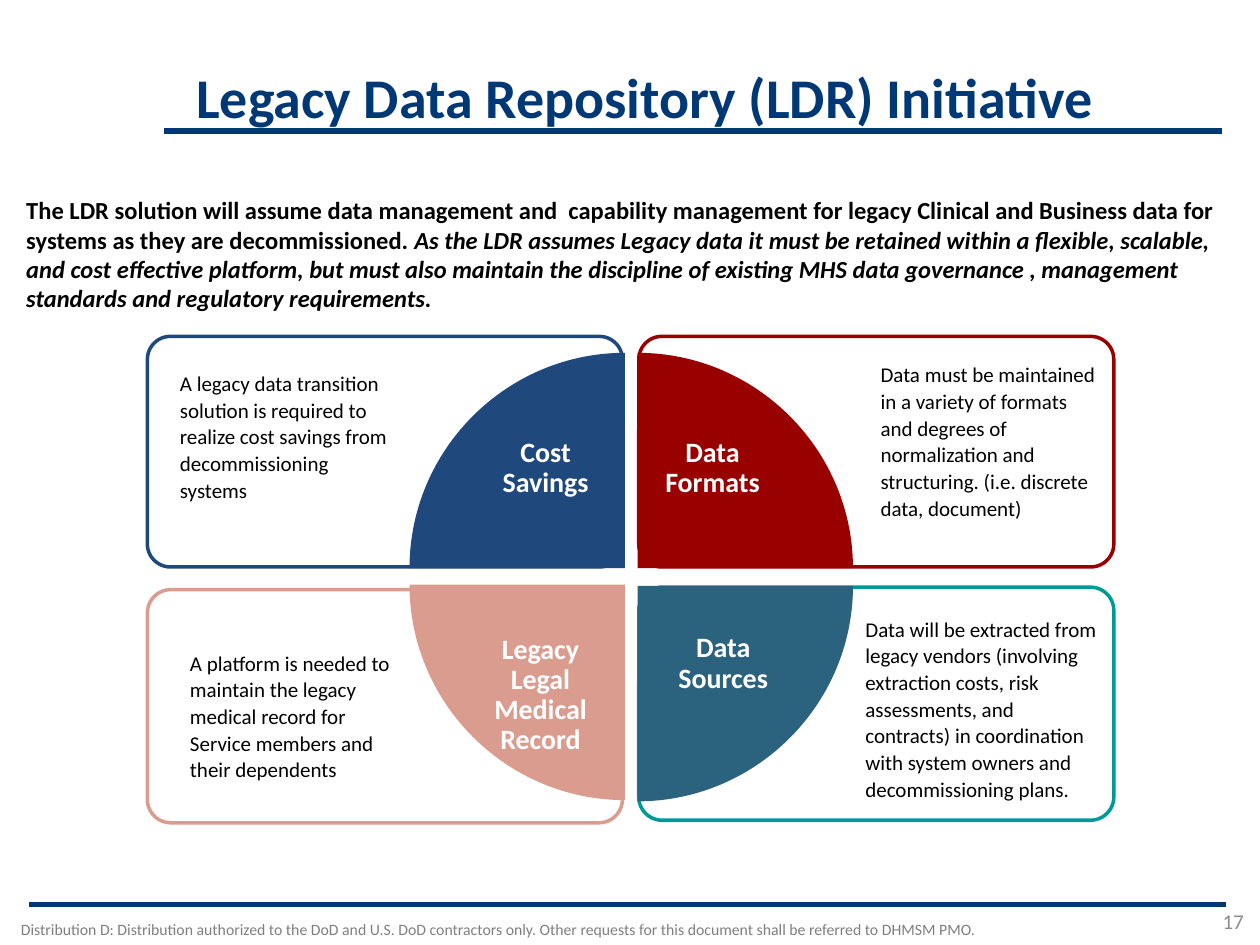
from dataclasses import dataclass

from lxml import etree
from pptx import Presentation
from pptx.dml.color import RGBColor
from pptx.enum.shapes import MSO_CONNECTOR, MSO_SHAPE
from pptx.enum.text import MSO_ANCHOR, PP_ALIGN
from pptx.oxml.ns import qn
from pptx.util import Inches, Pt

STRAIGHT = MSO_CONNECTOR.STRAIGHT
ROUNDED = MSO_SHAPE.ROUNDED_RECTANGLE
TOP, BOTTOM = MSO_ANCHOR.TOP, MSO_ANCHOR.BOTTOM
LEFT, CENTER, RIGHT = PP_ALIGN.LEFT, PP_ALIGN.CENTER, PP_ALIGN.RIGHT


@dataclass(frozen=True)
class Theme:
    """Colours, font and type sizes of the slide."""
    font: str = "Calibri"
    navy: str = "003876"
    white: str = "FFFFFF"
    black: str = "000000"
    page_grey: str = "8C8C8C"
    footer_grey: str = "7F7F7F"
    blue: str = "1F497D"
    red: str = "990000"
    rose: str = "DB9C90"
    teal: str = "009999"
    petrol: str = "2B637F"
    title: int = 32
    label: int = 16
    intro: int = 14
    note: int = 12
    footer: int = 9


THEME = Theme()
RADIUS = 1.71
ARC_PULL = 0.55


@dataclass(frozen=True)
class Quadrant:
    """One card: its box, hub, label and note, the last three relative to the box."""
    box: tuple
    hub: tuple
    side: tuple
    border: str
    fill: str
    label: str
    label_box: tuple
    note: str
    note_box: tuple


QUADRANTS = [
    Quadrant((1.17, 2.67, 3.77, 1.83), (3.79, 1.84), (-1, -1), THEME.blue, THEME.blue,
             "Cost Savings", (2.55, 0.76, 1.22, 0.59),
             "A legacy data transition solution is required to realize cost savings "
             "from decommissioning systems", (0.16, 0.21, 1.87, 1.45)),
    Quadrant((5.07, 2.67, 3.77, 1.83), (-0.01, 1.84), (1, -1), THEME.red, THEME.red,
             "Data Formats", (0, 0.76, 1.17, 0.59),
             "Data must be maintained in a variety of formats and degrees of "
             "normalization and structuring. (i.e. discrete data, document)",
             (1.82, 0.14, 1.94, 1.39)),
    Quadrant((1.17, 4.68, 3.77, 1.85), (3.79, -0.04), (-1, 1), THEME.rose, THEME.rose,
             "Legacy Legal Medical Record", (2.46, 0.31, 1.32, 1.07),
             "A platform is needed to maintain the legacy medical record for "
             "Service members and their dependents", (0.24, 0.42, 1.83, 1.17)),
    Quadrant((5.07, 4.66, 3.77, 1.85), (-0.01, -0.01), (1, 1), THEME.teal, THEME.petrol,
             "Data Sources", (0, 0.32, 1.34, 0.59),
             "Data will be extracted from legacy vendors (involving extraction costs, "
             "risk assessments, and contracts) in coordination with system owners and "
             "decommissioning plans.", (1.7, 0.17, 2.06, 1.59)),
]


def rgb(color):
    """Turn a hex string into a colour."""
    return RGBColor.from_string(color)


def add_text(slide, box, runs, size, color, align=LEFT, anchor=TOP, spacing=1.0):
    """Place one paragraph of (text, bold, italic) runs in a box."""
    frame = slide.shapes.add_textbox(*map(Inches, box)).text_frame
    frame.word_wrap = True
    frame.vertical_anchor = anchor
    paragraph = frame.paragraphs[0]
    paragraph.alignment = align
    paragraph.line_spacing = spacing
    for text, bold, italic in runs:
        run = paragraph.add_run()
        run.text = text
        run.font.name = THEME.font
        run.font.size = Pt(size)
        run.font.bold = bold
        run.font.italic = italic
        run.font.color.rgb = rgb(color)


def add_rule(slide, left, right, y):
    """Draw a horizontal navy rule."""
    rule = slide.shapes.add_connector(
        STRAIGHT, Inches(left), Inches(y), Inches(right), Inches(y))
    rule.line.color.rgb = rgb(THEME.navy)
    rule.line.width = Pt(3)
    etree.SubElement(rule._element.spPr, qn("a:effectLst"))


def add_card(slide, box, border):
    """Draw a rounded, nearly opaque white card."""
    card = slide.shapes.add_shape(ROUNDED, *map(Inches, box))
    card.adjustments[0] = 0.1
    card.shadow.inherit = False
    card.fill.solid()
    card.fill.fore_color.rgb = rgb(THEME.white)
    white = card._element.spPr.find(qn("a:solidFill"))[0]
    etree.SubElement(white, qn("a:alpha"), val="90000")
    card.line.color.rgb = rgb(border)
    card.line.width = Pt(2)


def bend_outer_edge(wedge):
    """Turn the straight edge opposite the hub into a quarter arc."""
    outline = wedge._element.spPr.find(".//" + qn("a:path"))
    hub, start, end = [(int(point.get("x")), int(point.get("y")))
                       for point in outline.iter(qn("a:pt"))]
    first = [s + ARC_PULL * (e - h) for h, s, e in zip(hub, start, end)]
    second = [e + ARC_PULL * (s - h) for h, s, e in zip(hub, start, end)]
    curve = etree.Element(qn("a:cubicBezTo"))
    for x, y in (first, second, end):
        etree.SubElement(curve, qn("a:pt"), x=str(round(x)), y=str(round(y)))
    outline.replace(outline.findall(qn("a:lnTo"))[1], curve)


def add_wedge(slide, hub, side, color):
    """Draw a quarter disc that opens from its hub towards one side."""
    (x, y), (across, down) = hub, side
    builder = slide.shapes.build_freeform(Inches(x), Inches(y))
    builder.add_line_segments([
        (Inches(x + across * RADIUS), Inches(y)),
        (Inches(x), Inches(y + down * RADIUS)),
    ], close=True)
    wedge = builder.convert_to_shape()
    bend_outer_edge(wedge)
    wedge.shadow.inherit = False
    wedge.fill.solid()
    wedge.fill.fore_color.rgb = rgb(color)
    wedge.line.fill.background()


def add_quadrant(slide, quadrant):
    """Build one card with its wedge, label and note."""
    left, top = quadrant.box[:2]

    def place(x, y, *size):
        """Move a position from the card to the slide."""
        return (left + x, top + y, *size)

    add_card(slide, quadrant.box, quadrant.border)
    add_wedge(slide, place(*quadrant.hub), quadrant.side, quadrant.fill)
    add_text(slide, place(*quadrant.label_box), [(quadrant.label, True, False)],
             THEME.label, THEME.white, align=CENTER, spacing=0.9)
    add_text(slide, place(*quadrant.note_box), [(quadrant.note, False, False)],
             THEME.note, THEME.black, spacing=1.06)


def add_header(slide, box):
    """Write the title above its rule."""
    left, top, width, height = box
    add_rule(slide, left - 0.16, left + width + 0.74, top + height - 0.05)
    add_text(slide, box, [("Legacy Data Repository (LDR) Initiative", True, False)],
             THEME.title, THEME.navy, anchor=BOTTOM, spacing=0.9)


def add_intro(slide, box):
    """Write the introduction."""
    add_text(slide, box, [
        ("The LDR solution will assume data management and  capability management for "
         "legacy Clinical and Business data for systems as they are decommissioned. ",
         True, False),
        ("As the LDR assumes Legacy data it must be retained within a flexible, scalable, "
         "and cost effective platform, but must also maintain the discipline of existing "
         "MHS data governance , management standards and regulatory requirements.",
         True, True),
    ], THEME.intro, THEME.black)


def add_footer(slide, box):
    """Write the distribution statement and page number under a rule."""
    left, top, width, height = box
    add_rule(slide, left + 0.23, left + width - 0.27, top + 0.02)
    add_text(slide, (left + 9.14, top, 0.83, 0.31), [("17", False, False)],
             THEME.note, THEME.page_grey, align=RIGHT)
    add_text(slide, (left, top + height - 0.25, 7.9, 0.25), [
        ("Distribution D: Distribution authorized to the DoD and U.S. DoD contractors only. "
         "Other requests for this document shall be referred to DHMSM PMO.", False, False),
    ], THEME.footer, THEME.footer_grey, align=CENTER)


def main():
    """Build and save the slide."""
    deck = Presentation()
    deck.slide_width, deck.slide_height = Inches(10), Inches(7.5)
    slide = deck.slides.add_slide(deck.slide_layouts[6])
    add_header(slide, (1.46, 0.33, 7.5, 0.76))
    for quadrant in QUADRANTS:
        add_quadrant(slide, quadrant)
    add_intro(slide, (0.11, 1.5, 9.79, 1.28))
    add_footer(slide, (0, 7.16, 10, 0.34))
    deck.save("out.pptx")


if __name__ == "__main__":
    main()
